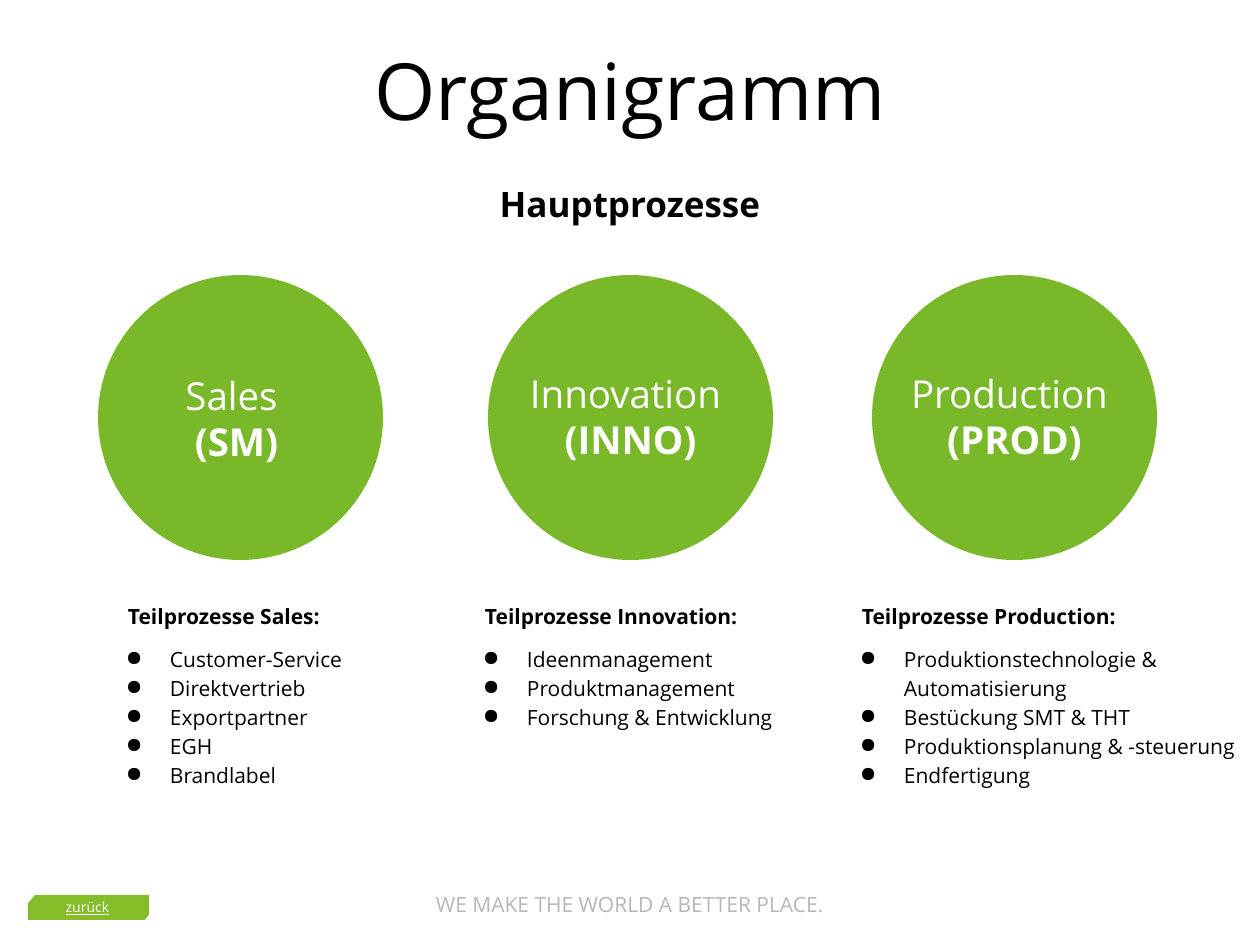
from lxml import etree
from pptx import Presentation
from pptx import util as u
from pptx.dml.color import RGBColor
from pptx.enum import shapes, text
from pptx.oxml.ns import qn

PX = 914400 // 126
FONT = "Open Sans"
COLORS = {"ink": "000000", "white": "FFFFFF", "circle": "79B829",
          "button": "84BC2A", "footer": "B7B7B7"}

TITLE = "Organigramm"
SUBTITLE = "Hauptprozesse"
FOOTER = "WE MAKE THE WORLD A BETTER PLACE."
BACK = "zurück"

PROCESSES = [
    {"name": "Sales", "code": "(SM)", "circle_x": 98, "label_at": (94, 359),
     "list_box": (94, 630, 365, 299),
     "parts": ["Customer-Service", "Direktvertrieb", "Exportpartner", "EGH", "Brandlabel"]},
    {"name": "Innovation", "code": "(INNO)", "circle_x": 488, "label_at": (488, 357),
     "list_box": (451, 630, 365, 299),
     "parts": ["Ideenmanagement", "Produktmanagement", "Forschung & Entwicklung"]},
    {"name": "Production", "code": "(PROD)", "circle_x": 872, "label_at": (872, 357),
     "list_box": (828, 630, 427, 174),
     "parts": ["Produktionstechnologie & Automatisierung", "Bestückung SMT & THT",
               "Produktionsplanung & -steuerung", "Endfertigung"]},
]
CIRCLE_Y, CIRCLE_SIZE = 275, 285
LABEL_HEIGHT = 121
HEADING_Y, HEADING_INDENT = 591, 21
BUTTON_CORNERS = [(23, 895, 13, 5), (145, 915, 13, 11)]
CORNER_ANGLE = 309.9


def emu(lengths):
    return [length * PX for length in lengths]


def color(name):
    return RGBColor.from_string(COLORS[name])


def write(box, lines, size, ink, bold=False, align=text.PP_ALIGN.CENTER, inset=(13, 13)):
    """Fill a text box or placeholder, one paragraph per line."""
    frame = box.text_frame
    frame.word_wrap = True
    frame.auto_size = text.MSO_AUTO_SIZE.NONE
    frame.vertical_anchor = text.MSO_ANCHOR.TOP
    frame.margin_left = frame.margin_right = inset[0] * PX
    frame.margin_top = frame.margin_bottom = inset[1] * PX
    frame.text = "\n".join(lines)
    for para in frame.paragraphs:
        para.alignment = align
        font = para.font
        font.name, font.size, font.bold = FONT, u.Pt(size), bold
        font.color.rgb = color(ink)
    return frame


def add_text(parent, at, lines, size, ink, **style):
    return write(parent.add_textbox(*emu(at)), lines, size, ink, **style)


def add_filled(parent, kind, at, fill):
    shape = parent.add_shape(kind, *emu(at))
    shape.shadow.inherit = False
    shape.fill.solid()
    shape.fill.fore_color.rgb = color(fill)
    shape.line.fill.background()
    return shape


def add_bullet(para):
    props = para._p.get_or_add_pPr()
    props.set("marL", str(u.Inches(0.5)))
    props.set("indent", str(u.Inches(-0.35)))
    etree.SubElement(props, qn("a:buChar")).set("char", "●")


def add_process(page, process):
    add_filled(page.shapes, shapes.MSO_SHAPE.OVAL,
               (process["circle_x"], CIRCLE_Y, CIRCLE_SIZE, CIRCLE_SIZE), "circle")
    label = add_text(page.shapes, (*process["label_at"], CIRCLE_SIZE, LABEL_HEIGHT),
                     [process["name"] + " ", process["code"]], 22, "white")
    label.paragraphs[1].font.bold = True

    left = process["list_box"][0]
    add_text(page.shapes, (left + HEADING_INDENT, HEADING_Y, 365, 50),
             [f"Teilprozesse {process['name']}:"], 12, "ink",
             bold=True, align=text.PP_ALIGN.LEFT)
    parts = add_text(page.shapes, process["list_box"], process["parts"], 12, "ink",
                     align=text.PP_ALIGN.LEFT)
    for para in parts.paragraphs:
        add_bullet(para)
        para.line_spacing = 1.15


def add_back_button(page):
    group = page.shapes.add_group_shape().shapes
    body = add_filled(group, shapes.MSO_SHAPE.RECTANGLE, (28, 895, 121, 25), "button")
    body.line.color.rgb = color("button")
    body.line.width = u.Pt(0.5)
    caption = add_text(group, (40, 893, 95, 30), [BACK], 8, "white", inset=(13, 6))
    caption.paragraphs[0].font.underline = True
    for at in BUTTON_CORNERS:
        corner = add_filled(group, shapes.MSO_SHAPE.RECTANGLE, at, "white")
        corner.rotation = CORNER_ANGLE


def main():
    deck = Presentation()
    deck.slide_width, deck.slide_height = emu((1260, 945))
    page = deck.slides.add_slide(deck.slide_layouts[5])

    title = page.shapes.title
    title.left, title.top, title.width, title.height = emu((43, 29, 1174, 134))
    write(title, [TITLE], 45, "ink")
    add_text(page.shapes, (0, 169, 1260, 79), [SUBTITLE], 20, "ink", bold=True)
    add_text(page.shapes, (0, 879, 1260, 39), [FOOTER], 12, "footer")
    for process in PROCESSES:
        add_process(page, process)
    add_back_button(page)
    deck.save("out.pptx")


if __name__ == "__main__":
    main()
